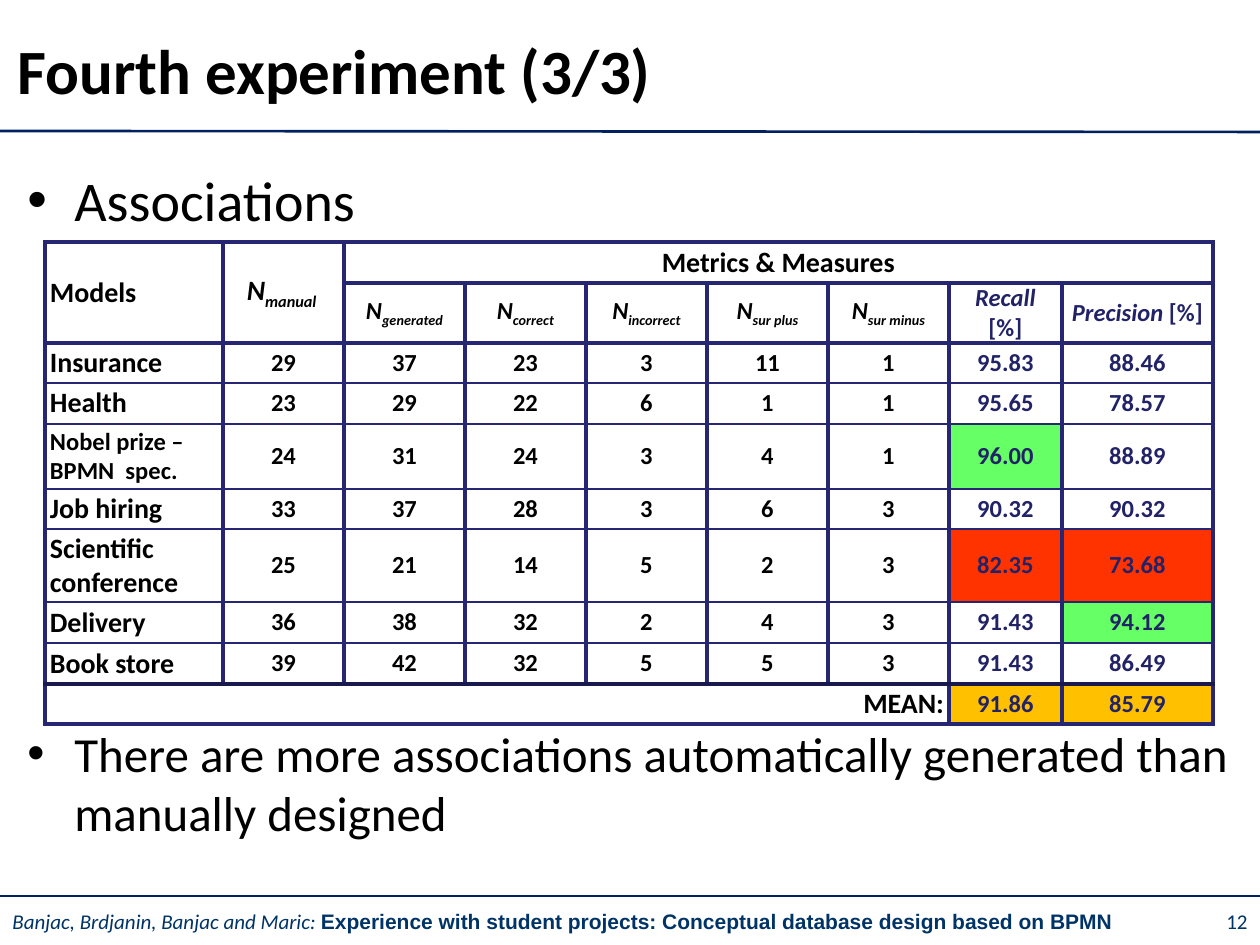
from itertools import accumulate

from lxml.etree import SubElement
from pptx import Presentation
from pptx.dml.color import RGBColor
from pptx.enum.shapes import MSO_CONNECTOR
from pptx.enum.text import MSO_ANCHOR, PP_ALIGN
from pptx.oxml.ns import qn
from pptx.util import Pt

TITLE = "Fourth experiment (3/3)"
BULLETS = [  # text, size name, top
    ("Associations", "bullet", 159),
    ("There are more associations automatically generated than manually designed",
     "conclusion", 717),
]
AUTHORS = "Banjac, Brdjanin, Banjac and Maric: "
PAPER = "Experience with student projects: Conceptual database design based on BPMN"
PAGE = "12"

COUNTS = ["generated", "correct", "incorrect", "sur plus", "sur minus"]
MEASURES = ["Recall ", "Precision "]
RESULTS = [
    ("Insurance", "29", "37", "23", "3", "11", "1", "95.83", "88.46"),
    ("Health", "23", "29", "22", "6", "1", "1", "95.65", "78.57"),
    ("Nobel prize – BPMN  spec.", "24", "31", "24", "3", "4", "1", "96.00", "88.89"),
    ("Job hiring", "33", "37", "28", "3", "6", "3", "90.32", "90.32"),
    ("Scientific conference", "25", "21", "14", "5", "2", "3", "82.35", "73.68"),
    ("Delivery", "36", "38", "32", "2", "4", "3", "91.43", "94.12"),
    ("Book store", "39", "42", "32", "5", "5", "3", "91.43", "86.49"),
]
MEANS = ["91.86", "85.79"]
SMALL_MODEL = "Nobel prize – BPMN  spec."

THEME = {
    "font": "Calibri", "footer_font": "Arial",
    "text": "000000", "footer": "003366", "rule": "002060", "measure": "222267",
    "border": "262673", "mean_border": "19194D", "cell": "FFFFFF",
    "best": "66FF66", "worst": "FF3300", "mean": "FFC000",
    "size": {"title": 36, "bullet": 32, "conclusion": 28, "label": 16,
             "value": 14, "footer": 12},
    "thick": 2.25, "thin": 1, "rule_width": 1.5,
}
SIZE = THEME["size"]

PX = 914400 / 126
SLIDE_W, SLIDE_H = 1260, 945
FOOTER_TOP, FOOTER_H, PAGE_LEFT = 897, 48, 1201
TABLE_LEFT, TABLE_TOP = 45, 242
COLUMNS = [178] + [121] * 6 + [113, 151]
ROWS = [41, 60, 40, 41, 65, 40, 73, 41, 41, 40]
FIRST_RESULT, FIRST_MEASURE = 2, 7
MEAN_ROW = FIRST_RESULT + len(RESULTS)
LABEL_INSET, VALUE_INSET, WIDE_INSET = (5, 3), (9, 0), (13, 6)
INDENT = 47


def px(length):
    return round(length * PX)


def add_run(paragraph, text, size, color="text", font="font",
            bold=False, italic=False, subscript=False):
    run = paragraph.add_run()
    run.text = text
    run.font.size, run.font.name = Pt(SIZE[size]), THEME[font]
    run.font.bold, run.font.italic = bold, italic
    run.font.color.rgb = RGBColor.from_string(THEME[color])
    if subscript:
        run.font._element.set("baseline", "-25000")


def add_text(slide, left, top, width, height, anchor=MSO_ANCHOR.TOP):
    frame = slide.shapes.add_textbox(*map(px, (left, top, width, height))).text_frame
    frame.word_wrap, frame.vertical_anchor = True, anchor
    return frame.paragraphs[0]


def add_bullet(slide, text, size, top):
    paragraph = add_text(slide, 15, top, 1226, 80)
    properties = paragraph._p.get_or_add_pPr()
    properties.set("marL", str(px(INDENT)))
    properties.set("indent", str(-px(INDENT)))
    SubElement(properties, qn("a:buFont")).set("typeface", "Arial")
    SubElement(properties, qn("a:buChar")).set("char", "•")
    add_run(paragraph, text, size)


def add_rule(slide, start_y, end_y):
    rule = slide.shapes.add_connector(
        MSO_CONNECTOR.STRAIGHT, 0, px(start_y), px(SLIDE_W), px(end_y))
    rule.line.color.rgb = RGBColor.from_string(THEME["rule"])
    rule.line.width = Pt(THEME["rule_width"])
    SubElement(rule._element.spPr, qn("a:effectLst"))


def add_border(cell, side, color, width):
    line = SubElement(cell._tc.get_or_add_tcPr(), qn(f"a:ln{side}"), w=str(Pt(width)))
    fill = SubElement(line, qn("a:solidFill"))
    SubElement(fill, qn("a:srgbClr")).set("val", THEME[color])


def row_edge(edge):
    """Colour and width of the horizontal border above row number edge."""
    thin = FIRST_RESULT < edge < MEAN_ROW
    return ("mean_border" if edge == MEAN_ROW else "border",
            THEME["thin" if thin else "thick"])


def fill_cell(table, row, column, runs, span=(1, 1), inset=VALUE_INSET,
              align=PP_ALIGN.CENTER, fill="cell"):
    """Write one cell; each run is a text and its add_run options."""
    cell = table.cell(row, column)
    if span != (1, 1):
        cell.merge(table.cell(row + span[0] - 1, column + span[1] - 1))
    cell.margin_left = cell.margin_right = px(inset[0])
    cell.margin_top = cell.margin_bottom = px(inset[1])
    cell.vertical_anchor = MSO_ANCHOR.MIDDLE
    for side in "LR":
        add_border(cell, side, "border", THEME["thick"])
    add_border(cell, "T", *row_edge(row))
    add_border(cell, "B", *row_edge(row + span[0]))
    cell.fill.solid()
    cell.fill.fore_color.rgb = RGBColor.from_string(THEME[fill])
    paragraph = cell.text_frame.paragraphs[0]
    paragraph.alignment = align
    for text, options in runs:
        add_run(paragraph, text, **{"size": "value", "bold": True, **options})


def fill_headers(table):
    label = {"size": "label"}
    symbol = {"italic": True}
    index = {"italic": True, "subscript": True}
    fill_cell(table, 0, 0, [("Models", label)], (2, 1), LABEL_INSET, PP_ALIGN.LEFT)
    fill_cell(table, 0, 1, [("N", label | symbol), ("manual ", label | index)],
              (2, 1), WIDE_INSET)
    fill_cell(table, 0, 2, [("Metrics & Measures", label)], (1, 7), LABEL_INSET)
    for column, count in enumerate(COUNTS, 2):
        fill_cell(table, 1, column, [("N", symbol), (count, index)],
                  inset=LABEL_INSET if column == 2 else VALUE_INSET)
    unit = {"color": "measure"}
    for column, measure in enumerate(MEASURES, FIRST_MEASURE):
        fill_cell(table, 1, column, [(measure, unit | symbol), ("[%]", unit)])


def fill_results(table):
    columns = list(zip(*RESULTS))
    for row, (model, *values) in enumerate(RESULTS, FIRST_RESULT):
        size = "value" if model == SMALL_MODEL else "label"
        fill_cell(table, row, 0, [(model, {"size": size})],
                  inset=LABEL_INSET, align=PP_ALIGN.LEFT)
        for column, value in enumerate(values, 1):
            color, fill = "text", "cell"
            if column >= FIRST_MEASURE:
                color = "measure"
                fill = {min(columns[column]): "worst",
                        max(columns[column]): "best"}.get(value, "cell")
            fill_cell(table, row, column, [(value, {"color": color})], fill=fill,
                      inset=LABEL_INSET if column < 3 else VALUE_INSET)
    fill_cell(table, MEAN_ROW, 0, [("MEAN:", {"size": "label"})],
              (1, FIRST_MEASURE), LABEL_INSET, PP_ALIGN.RIGHT)
    for column, mean in enumerate(MEANS, FIRST_MEASURE):
        fill_cell(table, MEAN_ROW, column, [(mean, {"color": "measure"})], fill="mean")


def add_results_table(slide):
    *_, width = accumulate(COLUMNS)
    *_, height = accumulate(ROWS)
    table = slide.shapes.add_table(
        len(ROWS), len(COLUMNS),
        *map(px, (TABLE_LEFT, TABLE_TOP, width, height))).table
    table.first_row = table.horz_banding = False
    for column, column_width in zip(table.columns, COLUMNS):
        column.width = px(column_width)
    for row, row_height in zip(table.rows, ROWS):
        row.height = px(row_height)
    fill_headers(table)
    fill_results(table)


def main():
    deck = Presentation()
    deck.slide_width, deck.slide_height = px(SLIDE_W), px(SLIDE_H)
    slide = deck.slides.add_slide(deck.slide_layouts[5])

    title = slide.shapes.title
    title.left, title.top, title.width, title.height = map(px, (5, 20, 1230, 98))
    title.text_frame.vertical_anchor = MSO_ANCHOR.MIDDLE
    heading = title.text_frame.paragraphs[0]
    heading.alignment = PP_ALIGN.LEFT
    add_run(heading, TITLE, "title", bold=True)

    add_rule(slide, 131, 132)
    add_rule(slide, 896, 896)
    for bullet in BULLETS:
        add_bullet(slide, *bullet)
    add_results_table(slide)

    footer = add_text(slide, 0, FOOTER_TOP, PAGE_LEFT, FOOTER_H, MSO_ANCHOR.MIDDLE)
    add_run(footer, AUTHORS, "footer", "footer", italic=True)
    add_run(footer, PAPER, "footer", "footer", "footer_font", bold=True)
    page = add_text(slide, PAGE_LEFT, FOOTER_TOP, SLIDE_W - PAGE_LEFT, FOOTER_H,
                    MSO_ANCHOR.MIDDLE)
    page.alignment = PP_ALIGN.RIGHT
    add_run(page, PAGE, "footer", "footer")
    deck.save("out.pptx")


if __name__ == "__main__":
    main()
